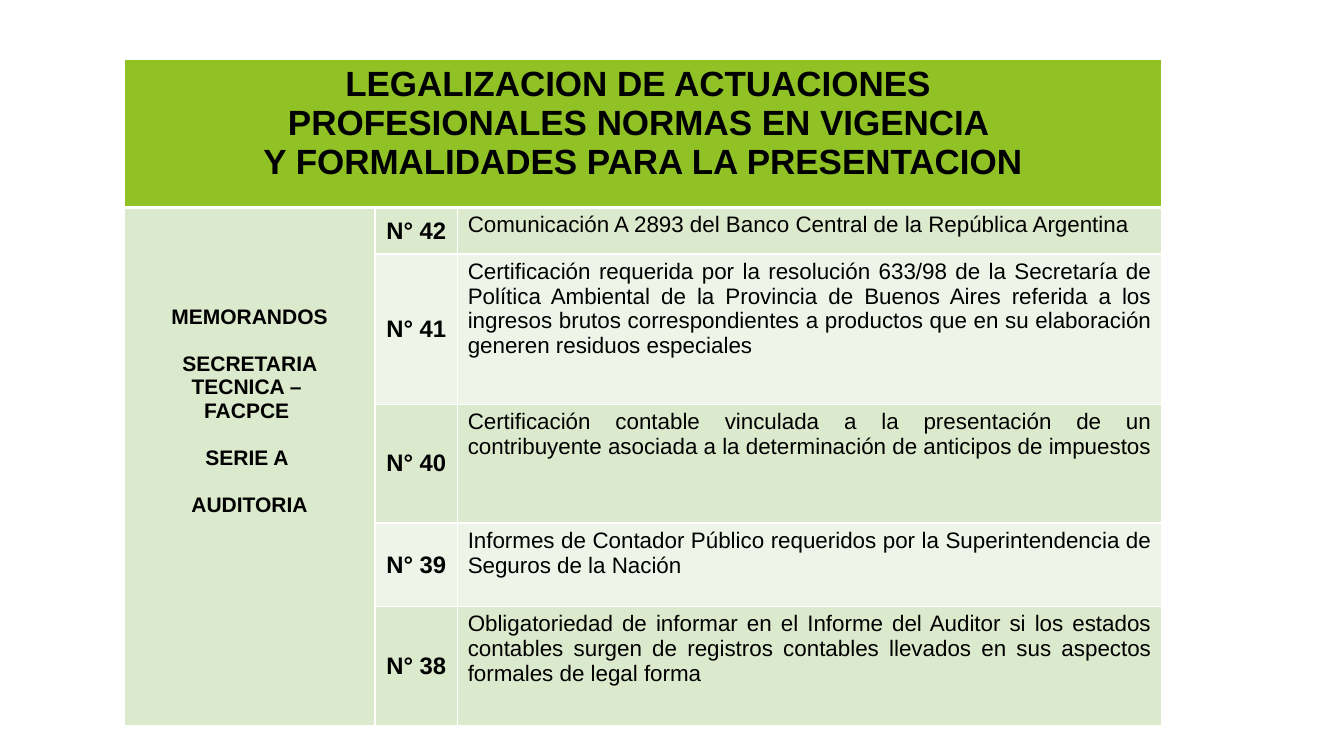
from lxml.etree import SubElement
from pptx import Presentation
from pptx.dml.color import RGBColor
from pptx.enum.text import MSO_ANCHOR, PP_ALIGN
from pptx.oxml.ns import qn
from pptx.util import Inches, Pt

BLACK = RGBColor(0x00, 0x00, 0x00)
WHITE = RGBColor(0xFF, 0xFF, 0xFF)
GREEN = RGBColor(0x90, 0xC2, 0x26)
LIGHT_GREEN = RGBColor(0xDB, 0xE9, 0xCD)
PALE_GREEN = RGBColor(0xEE, 0xF4, 0xE8)

COLUMN_WIDTHS = [2.49, 0.82, 6.98]
ROW_HEIGHTS = [1.47, 0.46, 1.49, 1.18, 0.83, 1.18]

HEADING = [
    "LEGALIZACION DE ACTUACIONES ",
    "PROFESIONALES NORMAS EN VIGENCIA ",
    "Y FORMALIDADES PARA LA PRESENTACION",
]
# Each group of lines is set apart from the one before it
SERIES_GROUPS = [
    ["MEMORANDOS"],
    ["SECRETARIA TECNICA – ", "FACPCE "],
    ["SERIE A "],
    ["AUDITORIA"],
]
MEMORANDA = [
    ("N° 42", "Comunicación A 2893 del Banco Central de la República Argentina"),
    ("N° 41", "Certificación requerida por la resolución 633/98 de la Secretaría de "
              "Política Ambiental de la Provincia de Buenos Aires referida a los "
              "ingresos brutos correspondientes a productos que en su elaboración "
              "generen residuos especiales"),
    ("N° 40", "Certificación contable vinculada a la presentación de un contribuyente "
              "asociada a la determinación de anticipos de impuestos"),
    ("N° 39", "Informes de Contador Público requeridos por la Superintendencia de "
              "Seguros de la Nación"),
    ("N° 38", "Obligatoriedad de informar en el Informe del Auditor si los estados "
              "contables surgen de registros contables llevados en sus aspectos "
              "formales de legal forma"),
]


class TableSlide:
    """Holds the slide and the shared style of its table."""

    font_name = "Arial"
    border_width = 1

    def __init__(self, presentation):
        self.slide = presentation.slides.add_slide(presentation.slide_layouts[6])

    def add_table(self, left, top, column_widths, row_heights):
        frame = self.slide.shapes.add_table(
            len(row_heights), len(column_widths), Inches(left), Inches(top),
            Inches(sum(column_widths)), Inches(sum(row_heights)))
        table = frame.table
        for column, width in zip(table.columns, column_widths):
            column.width = Inches(width)
        for row, height in zip(table.rows, row_heights):
            row.height = Inches(height)
        return table

    def paint_cell(self, cell, color, bottom_width=border_width):
        properties = cell._tc.get_or_add_tcPr()
        for side in ("lnL", "lnR", "lnT", "lnB"):
            width = bottom_width if side == "lnB" else self.border_width
            line = SubElement(properties, qn(f"a:{side}"), w=str(Pt(width)))
            line_fill = SubElement(line, qn("a:solidFill"))
            SubElement(line_fill, qn("a:srgbClr"), val=str(WHITE))
        cell.fill.solid()
        cell.fill.fore_color.rgb = color

    def write_cell(self, cell, lines, size, bold=True,
                   alignment=PP_ALIGN.CENTER, anchor=MSO_ANCHOR.TOP):
        cell.text_frame.text = "\n".join(lines)
        cell.vertical_anchor = anchor
        for paragraph in cell.text_frame.paragraphs:
            paragraph.alignment = alignment
            for run in paragraph.runs:
                run.font.name = self.font_name
                run.font.size = Pt(size)
                run.font.bold = bold
                run.font.color.rgb = BLACK

    def write_groups(self, cell, groups, size, gap):
        self.write_cell(cell, [line for group in groups for line in group], size)
        position = 0
        for group in groups[:-1]:
            position += len(group)
            cell.text_frame.paragraphs[position].space_before = Pt(gap)


def main():
    presentation = Presentation()
    presentation.slide_width = Inches(13.33)
    presentation.slide_height = Inches(7.5)
    page = TableSlide(presentation)
    table = page.add_table(1.23, 0.59, COLUMN_WIDTHS, ROW_HEIGHTS)

    # Heading across all columns
    for column in range(len(COLUMN_WIDTHS)):
        page.paint_cell(table.cell(0, column), GREEN, bottom_width=3)
    table.cell(0, 0).merge(table.cell(0, 2))
    page.write_cell(table.cell(0, 0), HEADING, 25)

    # Numbered memoranda in alternating bands
    for row, (number, description) in enumerate(MEMORANDA, start=1):
        band = LIGHT_GREEN if row % 2 else PALE_GREEN
        page.paint_cell(table.cell(row, 0), LIGHT_GREEN)
        page.paint_cell(table.cell(row, 1), band)
        page.paint_cell(table.cell(row, 2), band)
        page.write_cell(table.cell(row, 1), [number], 17, anchor=MSO_ANCHOR.MIDDLE)
        page.write_cell(table.cell(row, 2), [description], 16, bold=False,
                        alignment=PP_ALIGN.JUSTIFY)

    # Series name down the left side
    series_cell = table.cell(1, 0)
    series_cell.merge(table.cell(len(MEMORANDA), 0))
    series_cell.margin_top = Inches(0.97)
    page.write_groups(series_cell, SERIES_GROUPS, 15, gap=17)

    presentation.save("out.pptx")


if __name__ == "__main__":
    main()
